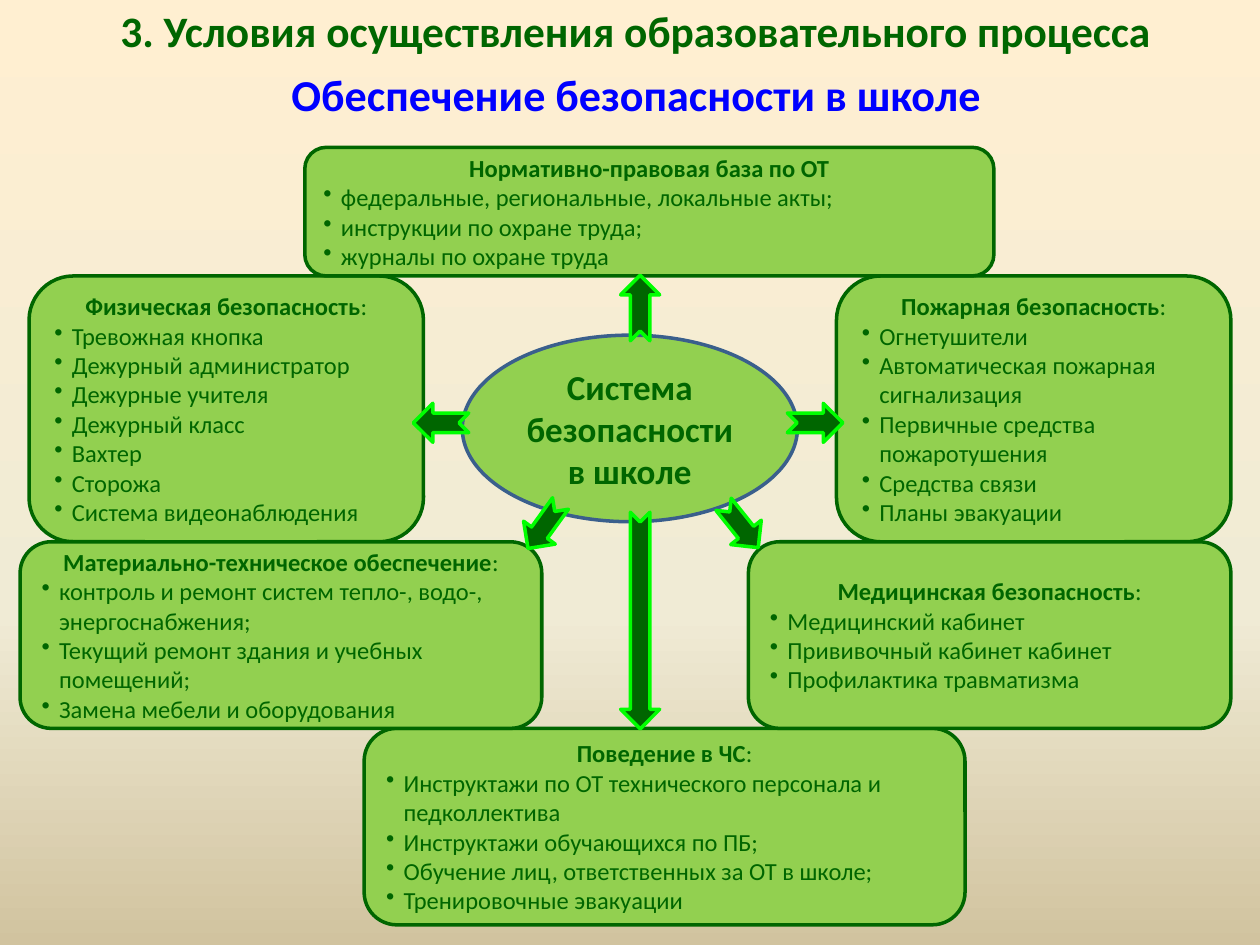
from copy import deepcopy

from pptx import Presentation
from pptx.dml.color import RGBColor
from pptx.enum.shapes import MSO_SHAPE as Preset
from pptx.enum.text import MSO_ANCHOR as Anchor, PP_ALIGN as Align
from pptx.oxml.ns import qn
from pptx.util import Pt

COLORS = {
    "green": "006600", "blue": "0000FF", "panel": "92D050",
    "ellipse_line": "3A5F8C", "arrow_line": "00FF00",
    "sky": "FFEFD1", "sand": "F0EBD5", "earth": "D1C39F",
}
FONT = "Calibri"
BULLET_INDENT = Pt(10)

# Edges shared by neighbouring panels
TOP, MIDDLE, LOWER, BOTTOM, END = 84.2, 157.7, 309.6, 416.2, 528.5
RIGHT_EDGE = 703.4

# (left, top, right, bottom), heading, mark after the heading, items
PANELS = [
    ((16.6, MIDDLE, 242, LOWER), "Физическая безопасность", ":", [
        "Тревожная кнопка", "Дежурный администратор", "Дежурные учителя",
        "Дежурный класс", "Вахтер", "Сторожа", "Система видеонаблюдения"]),
    ((208.1, BOTTOM, 551.5, END), "Поведение в ЧС", ":", [
        "Инструктажи по ОТ технического персонала и педколлектива",
        "Инструктажи обучающихся по ПБ;",
        "Обучение лиц, ответственных за ОТ в школе;",
        "Тренировочные эвакуации"]),
    ((478, MIDDLE, RIGHT_EDGE, LOWER), "Пожарная безопасность", ":", [
        "Огнетушители", "Автоматическая пожарная сигнализация",
        "Первичные средства пожаротушения", "Средства связи",
        "Планы эвакуации"]),
    ((174.2, TOP, 568, MIDDLE), "Нормативно-правовая база по ОТ", "", [
        "федеральные, региональные, локальные акты;",
        "инструкции по охране труда;", "журналы по охране труда"]),
    ((11.5, LOWER, 309.6, BOTTOM), "Материально-техническое обеспечение", ":", [
        "контроль и ремонт систем тепло-, водо-, энергоснабжения;",
        "Текущий ремонт здания и учебных помещений;",
        "Замена мебели и оборудования"]),
    ((427.7, LOWER, RIGHT_EDGE, BOTTOM), "Медицинская безопасность", ":", [
        "Медицинский кабинет", "Прививочный кабинет кабинет",
        "Профилактика травматизма"]),
]

# Centre x, centre y, length, rotation
ARROWS = [
    (365.8, 176, 37.4, 270), (252, 241.6, 31.7, 180),
    (311, 300.6, 31.7, 125.8), (423.4, 300.6, 31.7, 51.4),
    (465.8, 241.6, 31.7, 0), (365.8, 354.6, 123.8, 90),
]
ARROW_HEIGHT = 22.3


def rgb(name):
    return RGBColor.from_string(COLORS[name])


def set_font(para, size, color="green", bold=False):
    font = para.font
    font.name, font.size, font.bold = FONT, Pt(size), bold
    font.color.rgb = rgb(color)


def add_bullet(para):
    props = para._p.get_or_add_pPr()
    props.set("marL", str(BULLET_INDENT))
    props.set("indent", str(-BULLET_INDENT))
    mark = props.makeelement(qn("a:buChar"), {"char": "•"})
    props.insert_element_before(mark, "a:tabLst", "a:defRPr", "a:extLst")


def paint_background(page):
    """Fill the page with a three-stop gradient running downwards."""
    fill = page.background.fill
    fill.gradient()
    fill.gradient_angle = 270
    stop_list = page.element.xpath(".//a:gsLst")[0]
    stop_list.append(deepcopy(stop_list[0]))
    levels = [("sky", 0), ("sand", 0.65), ("earth", 1)]
    for stop, (color, position) in zip(fill.gradient_stops, levels):
        stop.color.rgb = rgb(color)
        stop.position = position


def add_figure(page, preset, box, fill, line):
    """Add a filled, outlined preset shape; box is left, top, width, height."""
    figure = page.shapes.add_shape(preset, *map(Pt, box))
    figure.shadow.inherit = False
    figure.fill.solid()
    figure.fill.fore_color.rgb = rgb(fill)
    figure.line.color.rgb = rgb(line)
    figure.line.width = Pt(2)
    figure.text_frame.word_wrap = True
    figure.text_frame.vertical_anchor = Anchor.MIDDLE
    return figure


def add_title(page, box, text, size, color, spacing=1.0):
    frame = page.shapes.add_textbox(*map(Pt, box)).text_frame
    frame.word_wrap = True
    frame.vertical_anchor = Anchor.MIDDLE
    para = frame.paragraphs[0]
    para.text = text
    para.alignment = Align.CENTER
    para.line_spacing = spacing
    set_font(para, size, color, bold=True)


def add_center(page, box):
    ellipse = add_figure(page, Preset.OVAL, box, "panel", "ellipse_line")
    para = ellipse.text_frame.paragraphs[0]
    para.text = "Система безопасности в школе"
    para.alignment = Align.CENTER
    set_font(para, 20, bold=True)


def add_panel(page, edges, heading, mark, items):
    left, top, right, bottom = edges
    box = (left, top, right - left, bottom - top)
    panel = add_figure(page, Preset.ROUNDED_RECTANGLE, box, "panel", "green")
    frame = panel.text_frame
    para = frame.paragraphs[0]
    para.alignment = Align.CENTER
    set_font(para, 14)
    span = para.add_run()
    span.text = heading
    span.font.bold = True
    if mark:
        para.add_run().text = mark
    for item in items:
        para = frame.add_paragraph()
        para.text = item
        para.alignment = Align.LEFT
        set_font(para, 14)
        add_bullet(para)


def add_arrow(page, center_x, center_y, length, rotation):
    box = (center_x - length / 2, center_y - ARROW_HEIGHT / 2, length, ARROW_HEIGHT)
    arrow = add_figure(page, Preset.NOTCHED_RIGHT_ARROW, box, "green", "arrow_line")
    arrow.rotation = rotation


def main():
    deck = Presentation()
    deck.slide_width, deck.slide_height = Pt(720), Pt(540)
    page = deck.slides.add_slide(deck.slide_layouts[6])
    paint_background(page)
    add_title(page, (39.6, 33.8, 648, 39.6),
              "Обеспечение безопасности в школе", 25.2, "blue")
    add_title(page, (39.6, 0, 648, 40.3),
              "3. Условия осуществления образовательного процесса",
              24.8, "green", spacing=0.8)
    add_center(page, (264.2, 191.5, 191.5, 106.6))
    for panel in PANELS:
        add_panel(page, *panel)
    for arrow in ARROWS:
        add_arrow(page, *arrow)
    deck.save("out.pptx")


if __name__ == "__main__":
    main()
